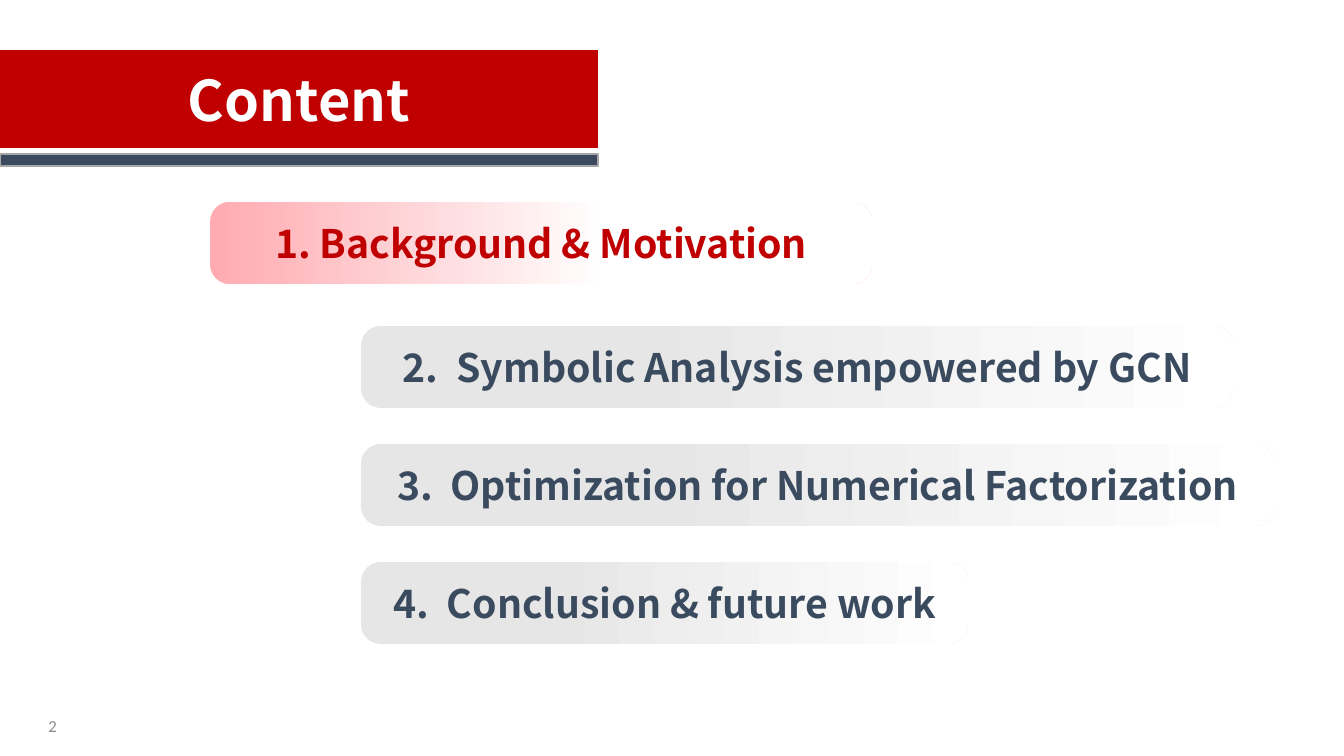
import dataclasses

import pptx
import pptx.dml.color
import pptx.enum.shapes
import pptx.enum.text
import pptx.util

RGBColor = pptx.dml.color.RGBColor
RED = RGBColor(0xC0, 0x00, 0x00)
NAVY = RGBColor(0x3A, 0x4B, 0x5F)
PINK = RGBColor(0xFF, 0xAB, 0xB1)
PALE_GRAY = RGBColor(0xE7, 0xE6, 0xE6)
EDGE_GRAY = RGBColor(0xA6, 0xA6, 0xA6)
NUMBER_GRAY = RGBColor(0x8C, 0x8C, 0x8C)
WHITE = RGBColor(0xFF, 0xFF, 0xFF)

HEADING_FONT = "Noto Sans CJK SC"
EMU_PER_PX = 914400 / 100.8
BANNER_WIDTH = 598
BAR_HEIGHT = 82
TOPIC_LEFT, TOPIC_TOP, TOPIC_PITCH = 361, 326, 118


def px(length: int) -> pptx.util.Emu:
    return pptx.util.Emu(round(length * EMU_PER_PX))


@dataclasses.dataclass(frozen=True)
class Box:
    left: int
    top: int
    width: int
    height: int

    def emu(self) -> tuple:
        return px(self.left), px(self.top), px(self.width), px(self.height)


@dataclasses.dataclass(frozen=True)
class BarStyle:
    text_color: RGBColor
    start_color: RGBColor
    start: float
    end: float


@dataclasses.dataclass(frozen=True)
class Topic:
    text: str
    box: Box
    style: BarStyle


CURRENT = BarStyle(RED, PINK, 0.0, 0.6)
UPCOMING = BarStyle(NAVY, PALE_GRAY, 0.31, 1.0)
UPCOMING_TOPICS = [
    ("2.  Symbolic Analysis empowered by GCN", 872),
    ("3.  Optimization for Numerical Factorization", 913),
    ("4.  Conclusion & future work", 607),
]
TOPICS = [Topic("1. Background & Motivation", Box(210, 202, 662, BAR_HEIGHT), CURRENT)] + [
    Topic(text, Box(TOPIC_LEFT, TOPIC_TOP + row * TOPIC_PITCH, width, BAR_HEIGHT), UPCOMING)
    for row, (text, width) in enumerate(UPCOMING_TOPICS)
]


def write(shape, text: str, size: int, color: RGBColor, font: str = HEADING_FONT,
          bold: bool = True, align=pptx.enum.text.PP_ALIGN.CENTER) -> None:
    frame = shape.text_frame
    frame.word_wrap = True
    frame.auto_size = pptx.enum.text.MSO_AUTO_SIZE.NONE
    frame.vertical_anchor = pptx.enum.text.MSO_ANCHOR.MIDDLE
    para = frame.paragraphs[0]
    para.alignment = align
    span = para.add_run()
    span.text = text
    span.font.name = font
    span.font.size = pptx.util.Pt(size)
    span.font.bold = bold
    span.font.color.rgb = color


def add_banner(page) -> None:
    title = page.shapes.title
    title.left, title.top, title.width, title.height = Box(0, 50, BANNER_WIDTH, 98).emu()
    title.fill.solid()
    title.fill.fore_color.rgb = RED
    write(title, "Content", 40, WHITE)

    stripe = page.shapes.add_shape(
        pptx.enum.shapes.MSO_SHAPE.RECTANGLE, *Box(0, 154, BANNER_WIDTH, 12).emu())
    stripe.shadow.inherit = False
    stripe.fill.solid()
    stripe.fill.fore_color.rgb = NAVY
    stripe.line.color.rgb = EDGE_GRAY
    stripe.line.width = pptx.util.Pt(1)


def add_topic(page, topic: Topic) -> None:
    bar = page.shapes.add_shape(
        pptx.enum.shapes.MSO_SHAPE.ROUNDED_RECTANGLE, *topic.box.emu())
    bar.adjustments[0] = 0.24
    bar.shadow.inherit = False
    bar.line.fill.background()
    bar.fill.gradient()
    bar.fill.gradient_angle = 0
    first, last = bar.fill.gradient_stops
    first.position, first.color.rgb = topic.style.start, topic.style.start_color
    last.position, last.color.rgb = topic.style.end, WHITE
    write(bar, topic.text, 28, topic.style.text_color)


def add_page_number(page) -> None:
    box = page.shapes.add_textbox(*Box(17, 706, 50, 40).emu())
    write(box, "2", 12, NUMBER_GRAY, font="Calibri", bold=False,
          align=pptx.enum.text.PP_ALIGN.RIGHT)


def main() -> None:
    deck = pptx.Presentation()
    deck.slide_width, deck.slide_height = px(1344), px(756)
    page = deck.slides.add_slide(deck.slide_layouts.get_by_name("Title Only"))
    add_banner(page)
    for topic in TOPICS:
        add_topic(page, topic)
    add_page_number(page)
    deck.save("out.pptx")


if __name__ == "__main__":
    main()
